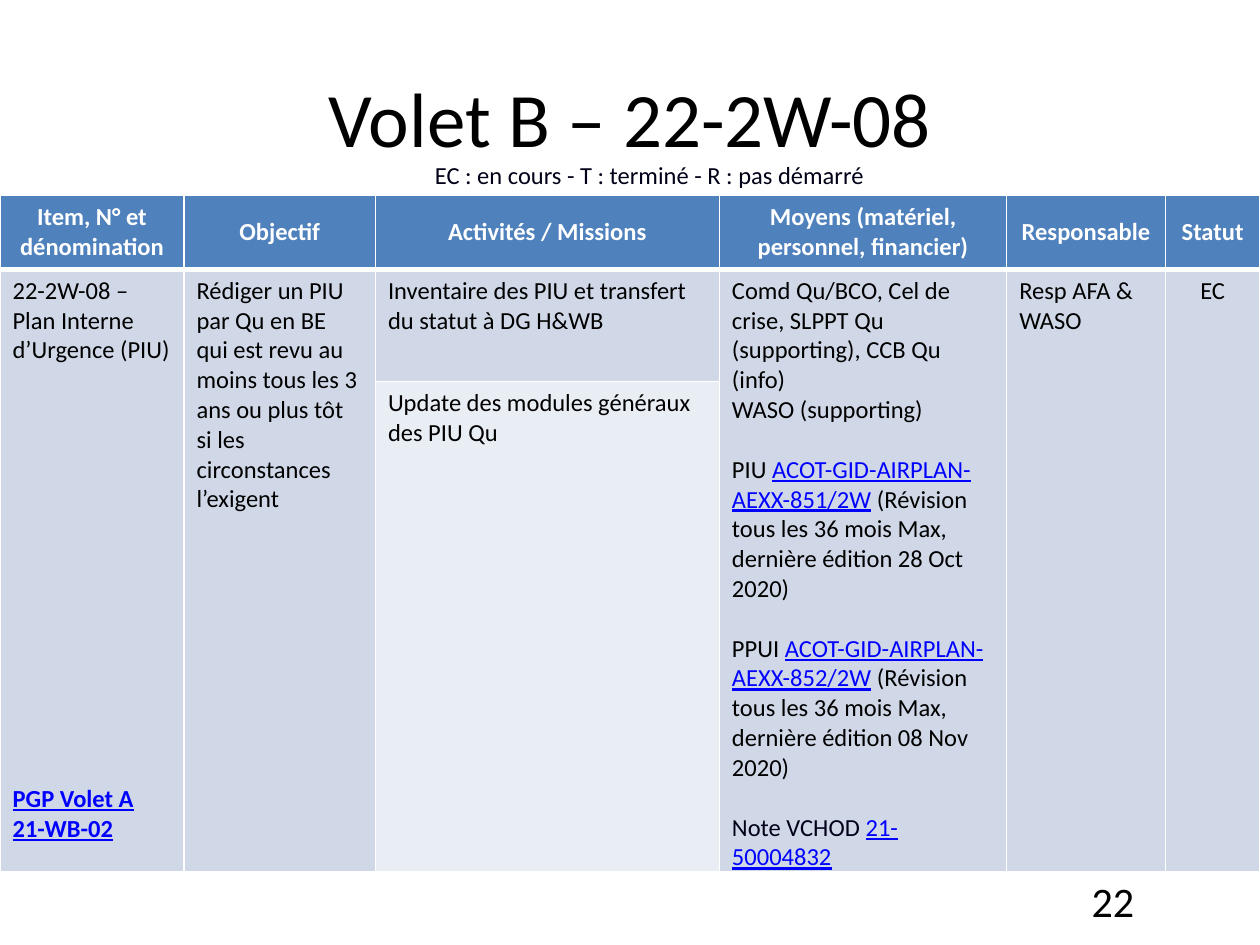
from dataclasses import dataclass

from lxml.etree import SubElement
from pptx import Presentation
from pptx.dml.color import RGBColor
from pptx.enum.text import MSO_ANCHOR, PP_ALIGN
from pptx.oxml.ns import qn
from pptx.util import Inches, Pt


@dataclass(frozen=True)
class Theme:
    font: str = "Calibri"
    black: str = "000000"
    white: str = "FFFFFF"
    navy: str = "000018"
    link: str = "0000FF"
    header: str = "4F81BD"
    band: str = "D0D8E8"
    light_band: str = "E9EDF4"
    title_size: int = 44
    number_size: int = 24
    body_size: int = 14
    line_height: float = 17.1


THEME = Theme()
COLUMN_WIDTHS = (1.46, 1.52, 2.73, 2.28, 1.26, 0.75)
ROW_HEIGHTS = (0.59, 0.89, 3.69)
ACTIVITY_COLUMN = 2
STATUS_COLUMN = 5
HEADERS = (
    "Item, N° et dénomination",
    "Objectif",
    "Activités / Missions",
    "Moyens (matériel, personnel, financier)",
    "Responsable",
    "Statut",
)


@dataclass(frozen=True)
class Piece:
    text: str
    color: str = THEME.black
    bold: bool = False
    underline: bool = False


@dataclass(frozen=True)
class Line:
    pieces: tuple
    lines_before: int = 0


def plain(text):
    """Return one paragraph of ordinary body text."""
    return (Line((Piece(text),)),)


def link(text, bold=False):
    """Return a piece of text in the link style."""
    return Piece(text, THEME.link, bold, True)


def plan_reference(name, code, date):
    """Return the paragraph that cites one emergency plan."""
    revision = f" (Révision tous les 36 mois Max, dernière édition {date})"
    return Line((Piece(f"{name} "), link(code), Piece(revision)), 1)


ITEM = plain("22-2W-08 – Plan Interne d’Urgence (PIU)") + (
    Line((link("PGP Volet A\n21-WB-02", True),), 14),
)
RESOURCES = plain(
    "Comd Qu/BCO, Cel de crise, SLPPT Qu (supporting), CCB Qu (info)\nWASO (supporting)"
) + (
    plan_reference("PIU", "ACOT-GID-AIRPLAN-AEXX-851/2W", "28 Oct 2020"),
    plan_reference("PPUI", "ACOT-GID-AIRPLAN-AEXX-852/2W", "08 Nov 2020"),
    Line((Piece("Note VCHOD ", THEME.navy), link("21-50004832")), 1),
)
BODY = (
    ITEM,
    plain("Rédiger un PIU par Qu en BE qui est revu au moins tous les 3 ans "
          "ou plus tôt si les circonstances l’exigent"),
    plain("Inventaire des PIU et transfert du statut à DG H&WB"),
    RESOURCES,
    plain("Resp AFA & WASO"),
    plain("EC"),
)
SECOND_ACTIVITY = plain("Update des modules généraux des PIU Qu")


def format_font(font, size, color, bold=False, underline=False):
    """Apply the theme typeface and the given look to a font."""
    font.name = THEME.font
    font.size = Pt(size)
    font.color.rgb = RGBColor.from_string(color)
    font.bold = bold
    font.underline = underline


def add_text(slide, box, text, size, color, alignment, anchor):
    """Add a single-paragraph text box."""
    shape = slide.shapes.add_textbox(*map(Inches, box))
    text_frame = shape.text_frame
    text_frame.word_wrap = True
    text_frame.vertical_anchor = anchor
    text_frame.text = text
    paragraph = text_frame.paragraphs[0]
    paragraph.alignment = alignment
    format_font(paragraph.runs[0].font, size, color)


def add_piece(paragraph, piece):
    """Append a formatted piece, breaking the line at each newline."""
    for index, text in enumerate(piece.text.split("\n")):
        if index:
            paragraph.add_line_break()
        run = paragraph.add_run()
        run.text = text
        format_font(run.font, THEME.body_size, piece.color, piece.bold, piece.underline)


def fill_cell(cell, content, alignment=PP_ALIGN.LEFT):
    """Write formatted paragraphs into a table cell."""
    text_frame = cell.text_frame
    for index, line in enumerate(content):
        paragraph = text_frame.add_paragraph() if index else text_frame.paragraphs[0]
        paragraph.alignment = alignment
        if line.lines_before:
            paragraph.space_before = Pt(line.lines_before * THEME.line_height)
        for piece in line.pieces:
            add_piece(paragraph, piece)


def style_cell(cell, fill, top=1, bottom=1):
    """Give a cell its white borders and its fill."""
    properties = cell._tc.get_or_add_tcPr()
    for side, width in (("L", 1), ("R", 1), ("T", top), ("B", bottom)):
        border = SubElement(properties, qn(f"a:ln{side}"), w=str(Pt(width)))
        SubElement(SubElement(border, qn("a:solidFill")), qn("a:srgbClr"), val=THEME.white)
    cell.fill.solid()
    cell.fill.fore_color.rgb = RGBColor.from_string(fill)


def add_action_table(slide):
    """Add the table of actions, resources and status."""
    frame = slide.shapes.add_table(
        len(ROW_HEIGHTS), len(COLUMN_WIDTHS), Inches(0), Inches(1.55),
        Inches(sum(COLUMN_WIDTHS)), Inches(sum(ROW_HEIGHTS)),
    )
    table = frame.table
    for row, height in zip(table.rows, ROW_HEIGHTS):
        row.height = Inches(height)
    for index, width in enumerate(COLUMN_WIDTHS):
        table.columns[index].width = Inches(width)
        header, first, second = (table.cell(row, index) for row in range(3))
        is_activity = index == ACTIVITY_COLUMN
        style_cell(header, THEME.header, bottom=3)
        style_cell(first, THEME.band, top=3)
        style_cell(second, THEME.light_band if is_activity else THEME.band)
        header.vertical_anchor = MSO_ANCHOR.MIDDLE
        fill_cell(header, (Line((Piece(HEADERS[index], THEME.white, True),)),), PP_ALIGN.CENTER)
        fill_cell(first, BODY[index],
                  PP_ALIGN.CENTER if index == STATUS_COLUMN else PP_ALIGN.LEFT)
        if is_activity:
            fill_cell(second, SECOND_ACTIVITY)
        else:
            first.merge(second)


def main():
    """Build and save the slide."""
    presentation = Presentation()
    presentation.slide_width = Inches(10)
    presentation.slide_height = Inches(7.5)
    slide = presentation.slides.add_slide(presentation.slide_layouts[6])
    add_text(slide, (0.5, 0.3, 9, 1.25), "Volet B – 22-2W-08",
             THEME.title_size, THEME.black, PP_ALIGN.CENTER, MSO_ANCHOR.MIDDLE)
    add_action_table(slide)
    add_text(slide, (7.17, 6.95, 1.93, 0.4), "22",
             THEME.number_size, THEME.black, PP_ALIGN.RIGHT, MSO_ANCHOR.MIDDLE)
    add_text(slide, (2.4, 1.17, 5.51, 0.38), "EC : en cours - T : terminé - R : pas démarré",
             THEME.body_size, THEME.navy, PP_ALIGN.CENTER, MSO_ANCHOR.BOTTOM)
    presentation.save("out.pptx")


if __name__ == "__main__":
    main()
